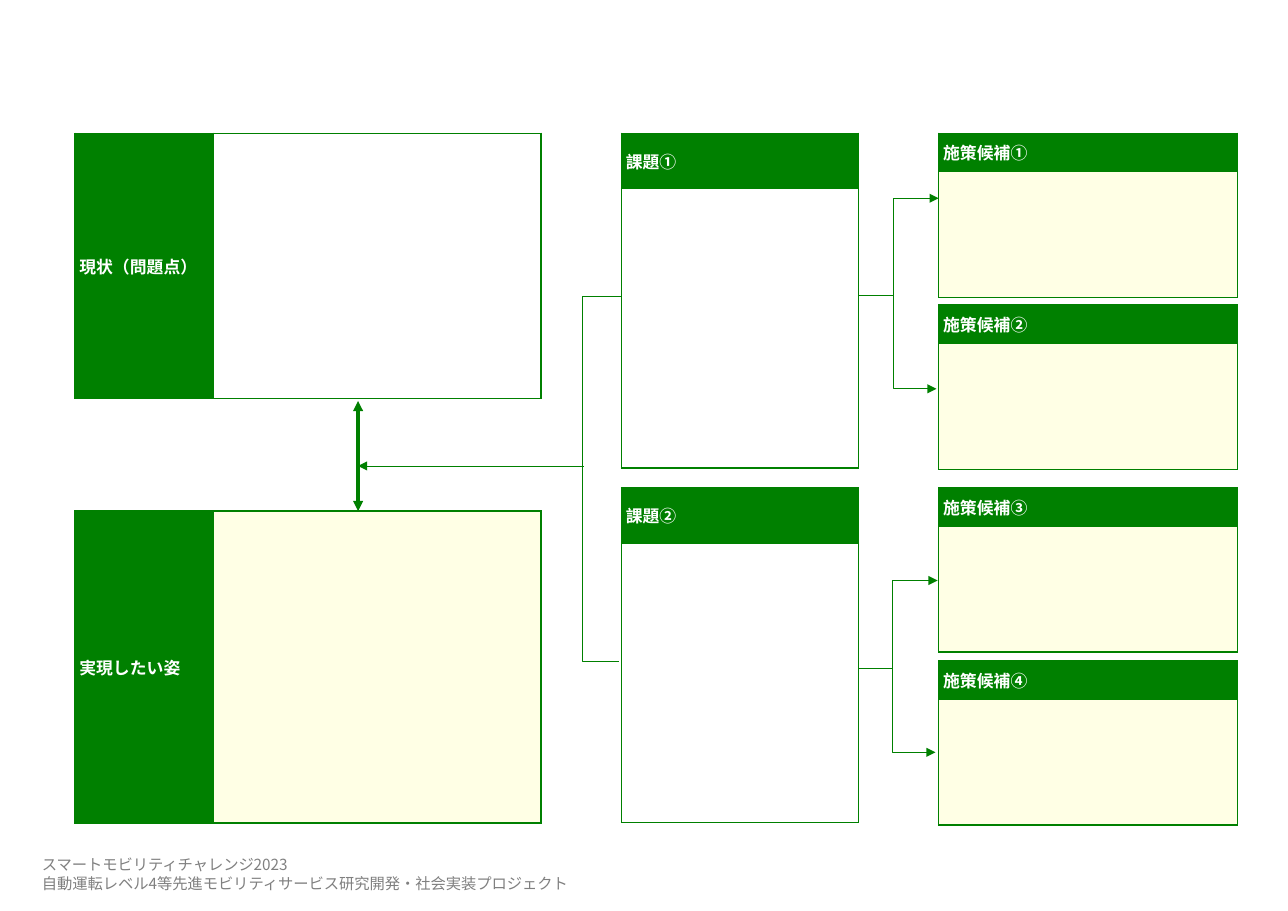
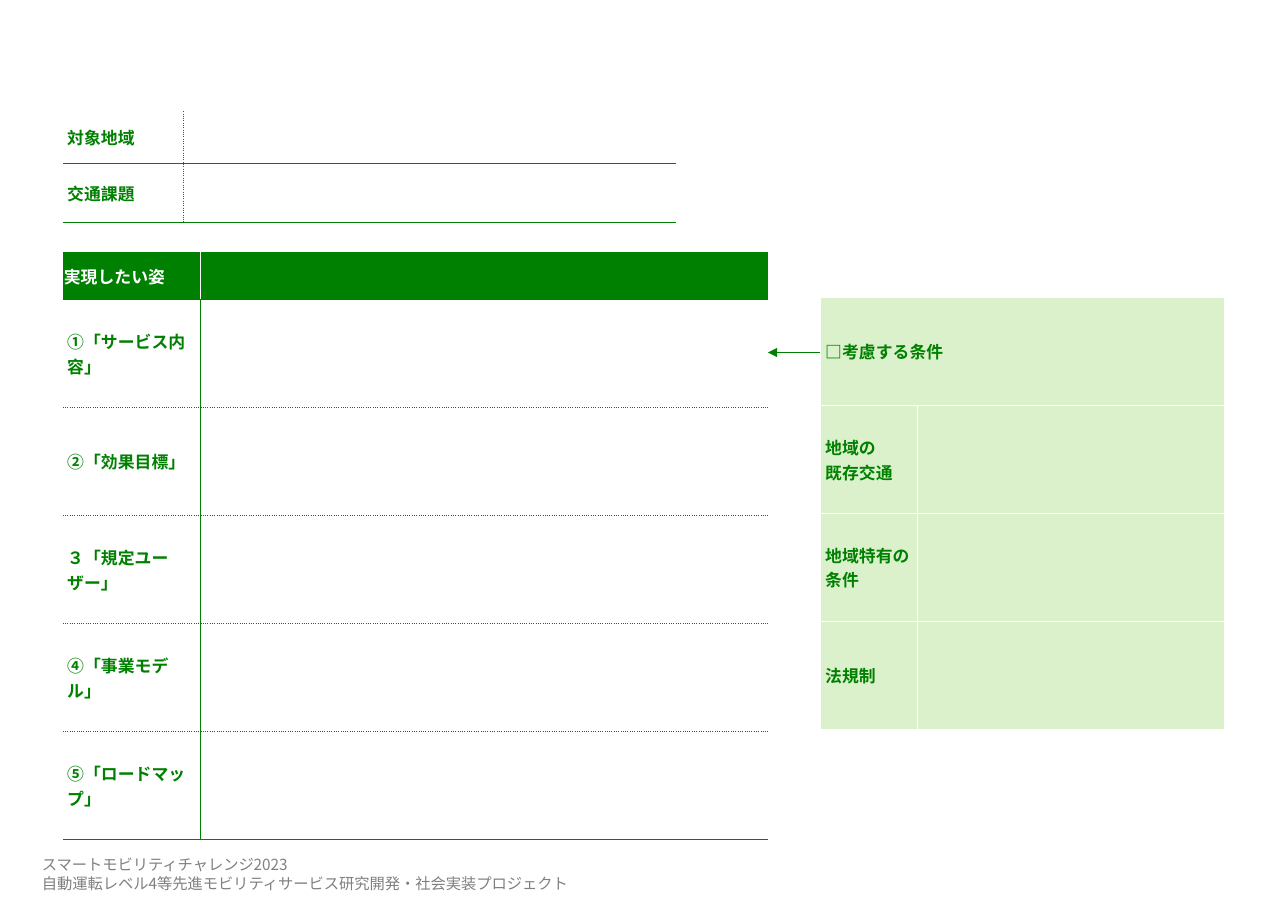
from copy import deepcopy

from lxml import etree
from pptx import Presentation
from pptx import util as u
from pptx.dml.color import RGBColor
from pptx.enum import shapes, text
from pptx.oxml import ns

GREEN = RGBColor(0x00, 0x80, 0x00)
PALE_GREEN = RGBColor(0xDB, 0xF1, 0xCB)
CREAM = RGBColor(0xFF, 0xFF, 0xE5)
GRAY = RGBColor(0x80, 0x80, 0x80)
WHITE = RGBColor(0xFF, 0xFF, 0xFF)
FONT = "Noto Sans CJK JP"
FOOTER = (
    "スマートモビリティチャレンジ2023",
    "自動運転レベル4等先進モビリティサービス研究開発・社会実装プロジェクト",
)


def add_node(parent, tag, **attributes):
    return etree.SubElement(parent, ns.qn(tag), attributes)


def write(para, content, size=11, color=GREEN, bold=True):
    para.text = content.replace("\n", "\v")
    for span in para.runs:
        span.font.size = u.Pt(size)
        span.font.bold = bold
        span.font.name = FONT
        span.font.color.rgb = color
        add_node(span.font._element, "a:ea", typeface=FONT)
    for line_break in para._p.findall(ns.qn("a:br")):
        line_break.append(deepcopy(para.runs[0].font._element))


def draw_border(cell, side, line):
    properties = cell._tc.get_or_add_tcPr()
    if line is None:
        add_node(add_node(properties, f"a:ln{side}", w="0"), "a:noFill")
        return
    color, width, dash = line
    border = add_node(properties, f"a:ln{side}", w=str(u.Pt(width)))
    add_node(add_node(border, "a:solidFill"), "a:srgbClr", val=str(color))
    add_node(border, "a:prstDash", val=dash)


class Board:
    def __init__(self):
        self.deck = Presentation()
        self.deck.slide_width = u.Inches(11.69)
        self.deck.slide_height = u.Inches(8.27)
        self.page = None

    def new_page(self):
        self.page = self.deck.slides.add_slide(self.deck.slide_layouts[6])
        box = self.page.shapes.add_textbox(
            u.Inches(0.38), u.Inches(7.71), u.Inches(7.91), u.Inches(0.44))
        frame = box.text_frame
        frame.word_wrap = True
        frame.vertical_anchor = text.MSO_ANCHOR.BOTTOM
        frame.margin_left = frame.margin_right = 0
        frame.add_paragraph()
        for para, content in zip(frame.paragraphs, FOOTER):
            write(para, content, size=10, color=GRAY, bold=False)
            para.line_spacing = u.Pt(12)

    def grid(self, left, top, widths, heights, lines):
        table = self.page.shapes.add_table(
            len(heights), len(widths), u.Inches(left), u.Inches(top),
            u.Inches(sum(widths)), u.Inches(sum(heights))).table
        table.first_row = table.horz_banding = False
        for column, width in zip(table.columns, widths):
            column.width = u.Inches(width)
        for row, height in zip(table.rows, heights):
            row.height = u.Inches(height)
        last_row, last_column = len(heights) - 1, len(widths) - 1
        for r in range(len(heights)):
            divider = lines.get("column")
            if r == 0:
                divider = lines.get("head", divider)
            for c in range(len(widths)):
                cell = table.cell(r, c)
                cell.margin_left = cell.margin_right = 0
                cell.margin_top = cell.margin_bottom = 0
                draw_border(cell, "L", divider if c else lines.get("left"))
                draw_border(cell, "R", divider if c < last_column else lines.get("right"))
                draw_border(cell, "T", lines.get("row") if r else lines.get("top"))
                draw_border(cell, "B", lines.get("row") if r < last_row else lines.get("bottom"))
                cell.fill.background()
        return table

    def label(self, cell, content, color=GREEN, indent=0.04):
        cell.margin_left = u.Inches(indent)
        cell.vertical_anchor = text.MSO_ANCHOR.MIDDLE
        write(cell.text_frame.paragraphs[0], content, color=color)

    def paint(self, cells, color):
        for cell in cells:
            cell.fill.solid()
            cell.fill.fore_color.rgb = color

    def card(self, left, top, widths, heights, title, body=None):
        sides = ("left", "right", "top", "bottom", "row", "column")
        table = self.grid(left, top, widths, heights,
                          dict.fromkeys(sides, (GREEN, 1, "solid")))
        head, content = table.iter_cells()
        self.paint([head], GREEN)
        self.label(head, title, WHITE)
        if body is not None:
            self.paint([content], body)

    def line(self, begin, end, width=0.5, head=False, tail=False, spine=None):
        kind = shapes.MSO_CONNECTOR
        connector = self.page.shapes.add_connector(
            kind.STRAIGHT if spine is None else kind.ELBOW,
            *(u.Inches(value) for value in begin + end))
        connector.line.color.rgb = GREEN
        connector.line.width = u.Pt(width)
        stroke = connector.line._get_or_add_ln()
        for tag, wanted in (("a:headEnd", head), ("a:tailEnd", tail)):
            if wanted:
                add_node(stroke, tag, type="triangle")
        add_node(connector._element.spPr, "a:effectLst")
        if spine is not None:
            bend = round((begin[0] - spine) / (begin[0] - end[0]) * 100000)
            guides = connector._element.spPr.prstGeom.get_or_add_avLst()
            add_node(guides, "a:gd", name="adj1", fmla=f"val {bend}")


def build_issue_page(board):
    board.new_page()
    board.card(0.68, 1.21, [1.26, 2.97], [2.41], "現状（問題点）")
    board.card(0.68, 4.64, [1.26, 2.97], [2.83], "実現したい姿", CREAM)
    for top, mark in ((1.21, "①"), (4.43, "②")):
        board.card(5.64, top, [2.15], [0.5, 2.54], f"課題{mark}")
    for top, mark in zip((1.21, 2.77, 4.43, 6), "①②③④"):
        board.card(8.52, top, [2.71], [0.35, 1.14], f"施策候補{mark}", CREAM)

    board.line((3.25, 3.64), (3.25, 4.64), width=2.25, head=True, tail=True)
    board.line((5.64, 2.69), (5.62, 6), spine=5.29)
    board.line((5.3, 4.23), (3.25, 4.23), tail=True)
    for right, upper, lower, middle in ((8.52, 1.8, 3.53, 2.68), (8.51, 5.27, 6.83, 6.07)):
        spine = right - 0.41
        board.line((right, upper), (right - 0.02, lower), head=True, tail=True, spine=spine)
        board.line((7.8, middle), (spine, middle))


def build_vision_page(board):
    board.new_page()
    solid = (GREEN, 0.5, "solid")
    white = (WHITE, 0.5, "solid")
    white_dots = (WHITE, 0.5, "dot")

    region = board.grid(0.57, 1.01, [1.09, 4.48], [0.47, 0.54], dict(
        column=(GREEN, 0.25, "sysDot"), row=solid, bottom=solid))
    for r, title in enumerate(("対象地域", "交通課題")):
        board.label(region.cell(r, 0), title)

    vision = board.grid(0.57, 2.29, [1.25, 5.15], [0.43] + [0.98] * 5, dict(
        column=solid, head=white, row=(GREEN, 0.5, "dot"), bottom=solid))
    board.paint([vision.cell(0, 0), vision.cell(0, 1)], GREEN)
    board.label(vision.cell(0, 0), "実現したい姿", WHITE, indent=0.01)
    topics = ("①「サービス内容」", "②「効果目標」", "３「規定ユーザー」",
              "④「事業モデル」", "⑤「ロードマップ」")
    for r, topic in enumerate(topics, 1):
        board.label(vision.cell(r, 0), topic)

    conditions = board.grid(7.45, 2.7, [0.88, 2.78], [0.98] * 4, dict(
        left=white_dots, right=white_dots, top=white, bottom=white_dots,
        row=white, column=white, head=None))
    board.paint(conditions.iter_cells(), PALE_GREEN)
    conditions.cell(0, 0).merge(conditions.cell(0, 1))
    titles = ("□考慮する条件", "地域の\n既存交通", "地域特有の\n条件", "法規制")
    for r, title in enumerate(titles):
        board.label(conditions.cell(r, 0), title)

    board.line((7.44, 3.2), (6.97, 3.2), tail=True)


def main():
    board = Board()
    build_issue_page(board)
    build_vision_page(board)
    board.deck.save("out.pptx")


if __name__ == "__main__":
    main()
